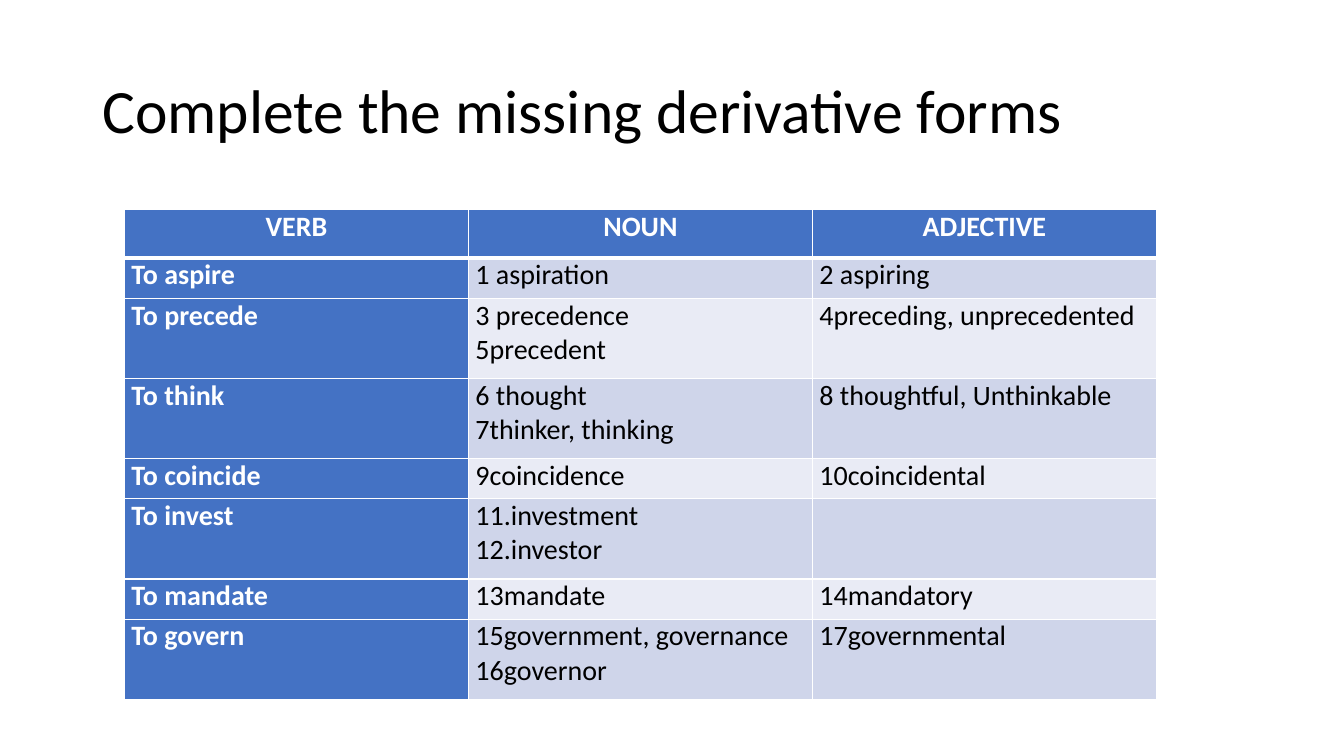
import pptx
import pptx.util
import pptx.dml.color
import pptx.enum.text
import pptx.oxml.ns
import lxml.etree

Pt = pptx.util.Pt
ALIGN = pptx.enum.text.PP_ALIGN

HEADING = "Complete the missing derivative forms"
WORD_FORMS = [
    ("VERB", "NOUN", "ADJECTIVE"),
    ("To aspire", "1 aspiration", "2 aspiring"),
    ("To precede", "3 precedence\n5precedent", "4preceding, unprecedented"),
    ("To think", "6 thought\n7thinker, thinking", "8 thoughtful, Unthinkable"),
    ("To coincide", "9coincidence", "10coincidental"),
    ("To invest", "11.investment\n12.investor", ""),
    ("To mandate", "13mandate", "14mandatory"),
    ("To govern", "15government, governance\n16governor", "17governmental"),
]
COLORS = {
    "black": "000000",
    "white": "FFFFFF",
    "blue": "4472C4",
    "band_dark": "CFD5EA",
    "band_light": "E9EBF5",
}
FONT = "Calibri"
COLUMN_WIDTH = 245.75
HEADER_HEIGHT = 34.6
LINE_HEIGHT = 28.65


def rgb(color):
    return pptx.dml.color.RGBColor.from_string(COLORS[color])


def write(frame, text, size=20, color="black", bold=False, align=ALIGN.LEFT, spacing=None):
    frame.word_wrap = True
    for index, line in enumerate(text.split("\n")):
        paragraph = frame.paragraphs[0] if index == 0 else frame.add_paragraph()
        paragraph.alignment = align
        paragraph.line_spacing = spacing
        paragraph.font.size = Pt(size)
        if line:
            run = paragraph.add_run()
            run.text = line
            run.font.name = FONT
            run.font.size = Pt(size)
            run.font.bold = bold
            run.font.color.rgb = rgb(color)


def add_border(cell, side, width):
    properties = cell._tc.get_or_add_tcPr()
    qn = pptx.oxml.ns.qn
    border = lxml.etree.SubElement(properties, qn(f"a:ln{side}"), w=str(Pt(width)))
    fill = lxml.etree.SubElement(border, qn("a:solidFill"))
    lxml.etree.SubElement(fill, qn("a:srgbClr"), val=COLORS["white"])


def main():
    deck = pptx.Presentation()
    deck.slide_width, deck.slide_height = Pt(960), Pt(540)
    slide = deck.slides.add_slide(deck.slide_layouts[6])

    heading = slide.shapes.add_textbox(Pt(66), Pt(28.75), Pt(828), Pt(104.4)).text_frame
    heading.vertical_anchor = pptx.enum.text.MSO_ANCHOR.MIDDLE
    write(heading, HEADING, size=44, spacing=0.9)

    heights = [HEADER_HEIGHT] + [
        LINE_HEIGHT * max(text.count("\n") + 1 for text in forms)
        for forms in WORD_FORMS[1:]
    ]
    columns = len(WORD_FORMS[0])
    table = slide.shapes.add_table(
        len(WORD_FORMS), columns, Pt(88.9), Pt(149.9),
        Pt(COLUMN_WIDTH * columns), Pt(sum(heights)),
    ).table
    for column in table.columns:
        column.width = Pt(COLUMN_WIDTH)

    for r, forms in enumerate(WORD_FORMS):
        table.rows[r].height = Pt(heights[r])
        for c, text in enumerate(forms):
            cell = table.cell(r, c)
            cell.margin_left = cell.margin_right = Pt(5)
            cell.margin_top = cell.margin_bottom = 0
            for side in "LRTB":
                under_header = (r, side) in ((0, "B"), (1, "T"))
                add_border(cell, side, 3 if under_header else 1)
            is_label = r == 0 or c == 0
            band = "band_dark" if r % 2 else "band_light"
            cell.fill.solid()
            cell.fill.fore_color.rgb = rgb("blue" if is_label else band)
            write(
                cell.text_frame, text, bold=is_label,
                color="white" if is_label else "black",
                align=ALIGN.CENTER if r == 0 else ALIGN.LEFT,
            )

    deck.save("out.pptx")


if __name__ == "__main__":
    main()
